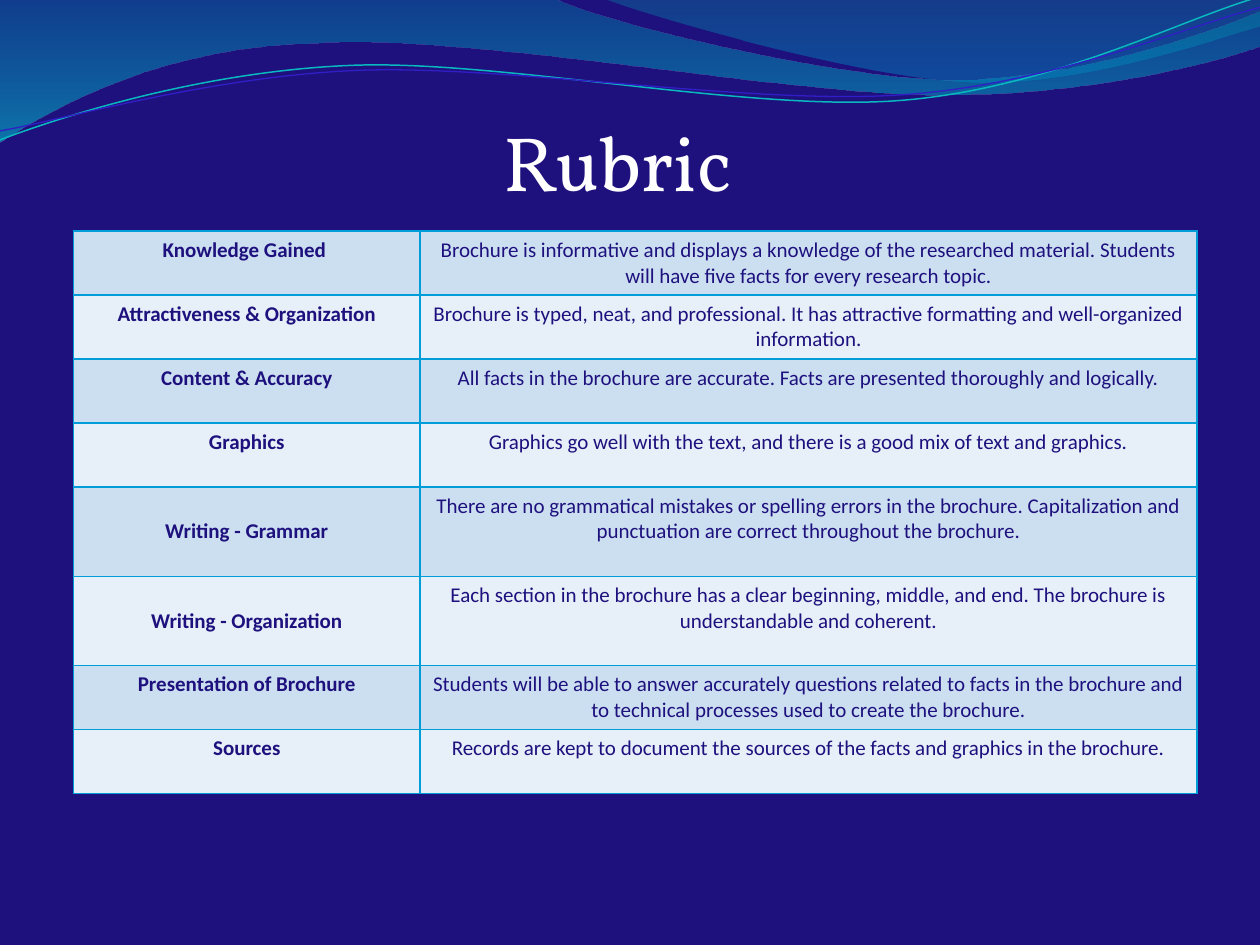
from lxml.etree import SubElement
from pptx import Presentation
from pptx.dml.color import RGBColor
from pptx.enum.text import MSO_ANCHOR as Anchor, MSO_AUTO_SIZE as AutoSize, PP_ALIGN as Align
from pptx.oxml.ns import qn
from pptx.util import Cm, Pt

NAVY = RGBColor(0x1E, 0x11, 0x7E)
WHITE = RGBColor(0xFF, 0xFF, 0xFF)
OCEAN = RGBColor(0x00, 0x74, 0xA1)
AQUA = RGBColor(0x00, 0xC6, 0xCF)
TEAL = RGBColor(0x00, 0xA1, 0xA9)
AZURE = RGBColor(0x00, 0x8B, 0xBF)
TURQUOISE = RGBColor(0x0A, 0xB8, 0xBF)
INDIGO = RGBColor(0x31, 0x1E, 0xC6)
BORDER = RGBColor(0x00, 0x9D, 0xD9)
BANDS = (RGBColor(0xCC, 0xDF, 0xF1), RGBColor(0xE7, 0xEF, 0xF8))

# Waves in cm: a start point, then segments of one point (line) or three (Bézier curve).
BROAD_WAVE = ((0, 0), [
    [(11.18, -0.03)],
    [(12.09, 0.43), (16.87, 1.6), (19.25, 1.6)],
    [(21.67, 1.6), (24.33, 0.66), (25.4, 0.23)],
    [(25.43, 0.91)],
    [(24.97, 1.12), (22.1, 1.93), (18.95, 1.91)],
    [(15.8, 1.91), (9.7, 0.71), (6.53, 0.86)],
    [(3.28, 0.91), (1.17, 2.11), (-0.03, 2.87)],
])
RIGHT_WAVE = ((12.17, -0.03), [
    [(12.93, 0.28), (17.32, 1.57), (19.53, 1.65)],
    [(21.74, 1.75), (24.41, 0.81), (25.4, 0.53)],
    [(25.4, 0)],
])
UPPER_LINE = ((0, 2.82), [
    [(1.22, 2.36), (4.01, 1.45), (7.04, 1.32)],
    [(10.03, 1.19), (15.06, 2.26), (18.11, 2.03)],
    [(21.16, 1.8), (23.83, 0.38), (25.35, -0.05)],
])
LOWER_LINE = ((0, 2.64), [
    [(1.19, 2.44), (4.17, 1.55), (7.19, 1.42)],
    [(10.24, 1.3), (15.16, 2.13), (18.21, 1.91)],
    [(21.23, 1.7), (23.9, 0.53), (25.4, 0.15)],
])

LOW, TALL = 1.29, 1.8
CRITERIA = [
    ("Knowledge Gained ", "Brochure is informative and displays a knowledge of the researched "
     "material. Students will have five facts for every research topic.", LOW),
    ("Attractiveness & Organization", "Brochure is typed, neat, and professional. It has "
     "attractive formatting and well-organized information.", LOW),
    ("Content & Accuracy", "All facts in the brochure are accurate. Facts are presented "
     "thoroughly and logically.", LOW),
    ("Graphics", "Graphics go well with the text, and there is a good mix of text and "
     "graphics.", LOW),
    ("Writing - Grammar", "There are no grammatical mistakes or spelling errors in the "
     "brochure. Capitalization and punctuation are correct throughout the brochure.", TALL),
    ("Writing - Organization", "Each section in the brochure has a clear beginning, middle, "
     "and end. The brochure is understandable and coherent.", TALL),
    ("Presentation of Brochure", "Students will be able to answer accurately questions related "
     "to facts in the brochure and to technical processes used to create the brochure.", LOW),
    ("Sources", "Records are kept to document the sources of the facts and graphics in the "
     "brochure.", LOW),
]


class RubricSlide:
    text_font = "Calibri"
    title_font = "Vollkorn"

    def __init__(self, presentation):
        self.slide = presentation.slides.add_slide(presentation.slide_layouts[5])
        fill = self.slide.background.fill
        fill.solid()
        fill.fore_color.rgb = NAVY

    def outline(self, wave, close):
        """Build a freeform, then join each three-point segment into one Bézier curve."""
        start, segments = wave
        builder = self.slide.shapes.build_freeform(*map(Cm, start))
        points = [(Cm(x), Cm(y)) for segment in segments for x, y in segment]
        builder.add_line_segments(points, close=close)
        shape = builder.convert_to_shape()
        shape.shadow.inherit = False
        lines = iter(list(shape.element.iter(qn("a:lnTo"))))
        for segment in segments:
            line = next(lines)
            if len(segment) == 3:
                line.tag = qn("a:cubicBezTo")
                for _ in range(2):
                    extra = next(lines)
                    line.append(extra[0])
                    extra.getparent().remove(extra)
        return shape

    def wave(self, wave, stops):
        """Fill a wave from top to bottom; stops are (position, colour, opacity in percent)."""
        shape = self.outline(wave, close=True)
        shape.line.fill.background()
        shape.fill.gradient()
        shape.fill.gradient_angle = 270
        for stop, (position, color, _) in zip(shape.fill.gradient_stops, stops):
            stop.position = position
            stop.color.rgb = color
        for element, (_, _, opacity) in zip(shape.element.iter(qn("a:srgbClr")), stops):
            SubElement(element, qn("a:alpha"), val=str(opacity * 1000))

    def curve(self, wave, color, width):
        shape = self.outline(wave, close=False)
        shape.fill.background()
        shape.line.color.rgb = color
        shape.line.width = Pt(width)

    def title(self, text, left, top, width, height):
        shape = self.slide.shapes.title
        shape.left, shape.top, shape.width, shape.height = map(Cm, (left, top, width, height))
        frame = shape.text_frame
        frame.text = text
        frame.auto_size = AutoSize.NONE
        frame.vertical_anchor = Anchor.BOTTOM
        frame.margin_left = frame.margin_top = frame.margin_right = frame.margin_bottom = 0
        self.format(frame.paragraphs[0], self.title_font, 44, WHITE)

    def format(self, paragraph, name, size, color, bold=False):
        paragraph.alignment = Align.CENTER
        font = paragraph.font
        font.name, font.size, font.bold = name, Pt(size), bold
        font.color.rgb = color

    def cell(self, cell, text, band, bold):
        properties = cell._tc.get_or_add_tcPr()
        for side in ("lnL", "lnR", "lnT", "lnB"):
            line = SubElement(properties, qn(f"a:{side}"), w=str(Pt(1)))
            SubElement(SubElement(line, qn("a:solidFill")), qn("a:srgbClr"), val=str(BORDER))
        cell.fill.solid()
        cell.fill.fore_color.rgb = band
        cell.text = text
        self.format(cell.text_frame.paragraphs[0], self.text_font, 12, NAVY, bold)

    def table(self, criteria, left, top, widths):
        height = sum(row[2] for row in criteria)
        table = self.slide.shapes.add_table(len(criteria), len(widths), Cm(left), Cm(top),
                                            Cm(sum(widths)), Cm(height)).table
        table.first_row = table.horz_banding = False
        for column, width in zip(table.columns, widths):
            column.width = Cm(width)
        for index, (name, description, row_height) in enumerate(criteria):
            table.rows[index].height = Cm(row_height)
            band = BANDS[index % 2]
            self.cell(table.cell(index, 0), name, band, bold=True)
            self.cell(table.cell(index, 1), description, band, bold=False)
            if row_height == TALL:
                table.cell(index, 0).vertical_anchor = Anchor.MIDDLE


def main():
    presentation = Presentation()
    presentation.slide_width, presentation.slide_height = Cm(25.4), Cm(19.05)
    rubric = RubricSlide(presentation)
    rubric.wave(BROAD_WAVE, [(0, OCEAN, 45), (1, AQUA, 55)])
    rubric.wave(RIGHT_WAVE, [(0, TEAL, 30), (0.8, AZURE, 45)])
    rubric.curve(UPPER_LINE, TURQUOISE, 0.85)
    rubric.curve(LOWER_LINE, INDIGO, 0.75)
    rubric.title("Rubric", 0, 1.84, 24.9, 2.34)
    rubric.table(CRITERIA, 1.48, 4.66, (6.99, 15.66))
    presentation.save("out.pptx")


if __name__ == "__main__":
    main()
